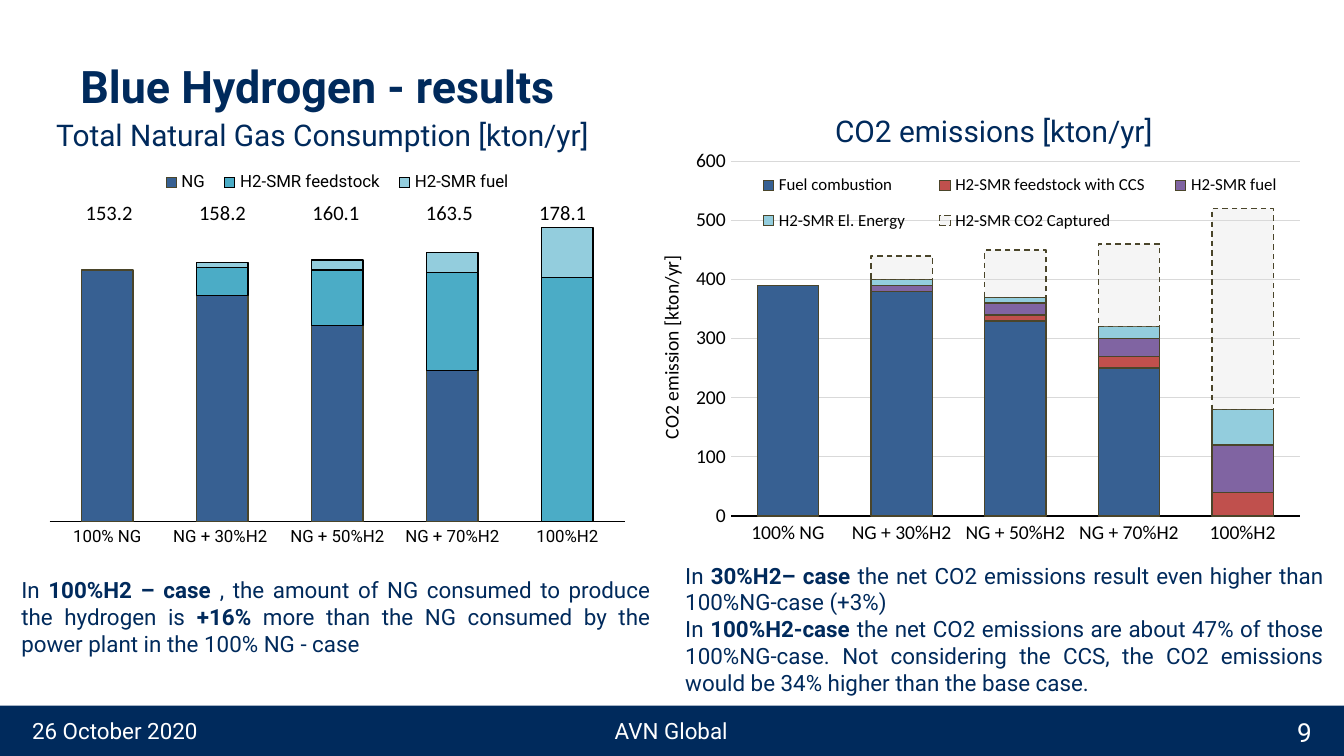
from dataclasses import dataclass

from lxml import etree
from pptx import Presentation
from pptx.chart.data import CategoryChartData
from pptx.dml.color import RGBColor
from pptx.enum.chart import XL_CHART_TYPE as ChartType, XL_LEGEND_POSITION as LegendPosition
from pptx.enum.chart import XL_TICK_MARK as TickMark
from pptx.enum.dml import MSO_LINE_DASH_STYLE as Dash
from pptx.enum.shapes import MSO_SHAPE as Shape
from pptx.enum.text import MSO_ANCHOR as Anchor, PP_ALIGN as Align
from pptx.oxml.ns import qn
from pptx.util import Inches, Pt

PLAIN_TABLE_STYLE = "{2D5ABB26-0587-4C30-8999-92F81FD0307C}"


@dataclass(frozen=True)
class Theme:
    heading_font: str = "Roboto"
    chart_font: str = "Calibri"
    navy: str = "002A5C"
    white: str = "FFFFFF"
    black: str = "000000"
    outline: str = "4A452A"
    grid: str = "D9D9D9"
    blue: str = "376092"
    teal: str = "4BACC6"
    pale_blue: str = "93CDDD"
    red: str = "C0504D"
    purple: str = "8064A2"
    title_size: float = 24
    subtitle_size: float = 16
    page_size: float = 14
    body_size: float = 12
    total_size: float = 11
    axis_size: float = 10.5
    small_size: float = 9
    line_width: float = 0.75


def rgb(color):
    return RGBColor.from_string(color)


def set_font(font, size, color, name, bold=None):
    font.size, font.name, font.bold = Pt(size), name, bold
    font.color.rgb = rgb(color)


def manual_layout(box, chart_size, inner=False):
    """Return a chart layout element for a box in inches inside the chart."""
    layout = etree.Element(qn("c:layout"))
    manual = etree.SubElement(layout, qn("c:manualLayout"))
    settings = [("layoutTarget", "inner")] if inner else []
    settings += [("xMode", "edge"), ("yMode", "edge")]
    settings += [(tag, str(length / total)) for tag, length, total in zip("xywh", box, chart_size * 2)]
    for tag, value in settings:
        etree.SubElement(manual, qn(f"c:{tag}")).set("val", value)
    return layout


class SlideBuilder:
    def __init__(self, slide, theme):
        self.slide, self.theme = slide, theme

    def bar(self, *box):
        shape = self.slide.shapes.add_shape(Shape.RECTANGLE, *map(Inches, box))
        shape.shadow.inherit = False
        shape.fill.solid()
        shape.fill.fore_color.rgb = rgb(self.theme.navy)
        shape.line.fill.background()

    def text(self, box, paragraphs, size, color=None, align=Align.LEFT, anchor=Anchor.TOP, bold=None):
        """Each paragraph is a list of runs; every second run is bold."""
        frame = self.slide.shapes.add_textbox(*map(Inches, box)).text_frame
        frame.word_wrap, frame.vertical_anchor = True, anchor
        for index, runs in enumerate(paragraphs):
            paragraph = frame.add_paragraph() if index else frame.paragraphs[0]
            paragraph.alignment = align
            set_font(paragraph.font, size, color or self.theme.navy, self.theme.heading_font, bold)
            for position, words in enumerate(runs):
                run = paragraph.add_run()
                run.text = words
                if position % 2:
                    run.font.bold = True

    def totals(self, box, values):
        table = self.slide.shapes.add_table(1, len(values), *map(Inches, box)).table
        table.first_row = table.horz_banding = False
        table._tbl.find(".//" + qn("a:tableStyleId")).text = PLAIN_TABLE_STYLE
        for cell, value in zip(table.rows[0].cells, values):
            cell.fill.background()
            cell.margin_left = cell.margin_right = cell.margin_top = cell.margin_bottom = 0
            cell.vertical_anchor = Anchor.MIDDLE
            paragraph = cell.text_frame.paragraphs[0]
            paragraph.text, paragraph.alignment = value, Align.CENTER
            set_font(paragraph.font, self.theme.total_size, self.theme.black, self.theme.chart_font)

    def stacked_chart(self, box, categories, series_rows, font, axis_size, gap, maximum, plot_box, legend_box):
        """Each series row is (name, values, fill colour, line colour)."""
        theme = self.theme
        data = CategoryChartData()
        data.categories = categories
        for name, values, *_ in series_rows:
            data.add_series(name, values)
        chart = self.slide.shapes.add_chart(ChartType.COLUMN_STACKED, *map(Inches, box), data).chart
        set_font(chart.font, axis_size, theme.black, font)
        chart.has_title = False

        plot = chart.plots[0]
        plot.gap_width, plot.overlap, plot.vary_by_categories = gap, 100, False
        for series, (_, _, fill, line) in zip(plot.series, series_rows):
            series.format.fill.solid()
            series.format.fill.fore_color.rgb = rgb(fill)
            series.format.line.color.rgb = rgb(line)
            series.format.line.width = Pt(theme.line_width)

        category_axis, value_axis = chart.category_axis, chart.value_axis
        category_axis.format.line.color.rgb = rgb(theme.black)
        category_axis.format.line.width = Pt(theme.line_width)
        for axis in (category_axis, value_axis):
            axis.major_tick_mark = axis.minor_tick_mark = TickMark.NONE
            set_font(axis.tick_labels.font, axis_size, theme.black, font)
        value_axis.minimum_scale, value_axis.maximum_scale = 0, maximum
        value_axis.has_major_gridlines = False

        chart.has_legend = True
        chart.legend.position = LegendPosition.TOP
        chart.legend.include_in_layout = False
        set_font(chart.legend.font, theme.small_size, theme.black, font)

        # Fixed places for the plot and the legend
        plot_area = chart._chartSpace.find(".//" + qn("c:plotArea"))
        legend = chart.legend._element
        for parent in (plot_area, legend):
            for layout in parent.findall(qn("c:layout")):
                parent.remove(layout)
        plot_area.insert(0, manual_layout(plot_box, box[2:], inner=True))
        legend.find(qn("c:legendPos")).addnext(manual_layout(legend_box, box[2:]))
        return chart

    def value_scale(self, chart, step, title):
        theme, axis = self.theme, chart.value_axis
        axis.major_unit = step
        axis.tick_labels.number_format = "0"
        axis.tick_labels.number_format_is_linked = False
        axis.format.line.fill.background()
        axis.has_major_gridlines = True
        axis.major_gridlines.format.line.color.rgb = rgb(theme.grid)
        axis.major_gridlines.format.line.width = Pt(theme.line_width)
        paragraph = axis.axis_title.text_frame.paragraphs[0]
        paragraph.text = title
        set_font(paragraph.font, theme.axis_size, theme.black, theme.chart_font, False)

    def ghost_series(self, series, opacity):
        series.format.line.dash_style = Dash.DASH
        color = series._element.find("/".join(map(qn, ("c:spPr", "a:solidFill", "a:srgbClr"))))
        etree.SubElement(color, qn("a:alpha")).set("val", str(opacity * 1000))


def main():
    presentation = Presentation()
    presentation.slide_width = Inches(10)
    presentation.slide_height = presentation.slide_width * 9 // 16
    theme = Theme()
    builder = SlideBuilder(presentation.slides.add_slide(presentation.slide_layouts[6]), theme)

    # Footer
    builder.bar(0, 5.25, 10, 0.38)
    for left, top, width, words, size, align in [
        (3.83, 5.25, 2.33, "AVN Global", theme.body_size, Align.CENTER),
        (0.14, 5.25, 3.6, "26 October 2020", theme.body_size, Align.LEFT),
        (7.33, 5.26, 2.53, "9", theme.page_size, Align.RIGHT),
    ]:
        builder.text((left, top, width, 0.37), [[words]], size, theme.white, align, Anchor.MIDDLE)

    # Headings
    builder.text((0.5, 0.39, 9, 0.77), [["Blue Hydrogen - results"]], theme.title_size, bold=True)
    builder.text((0.32, 0.82, 4.68, 0.37), [["Total Natural Gas Consumption [kton/yr]"]], theme.subtitle_size)

    # Natural gas consumption
    consumption = builder.stacked_chart(
        (0.27, 1.19, 4.48, 3.09), ["100% NG", "NG + 30%H2 ", "NG + 50%H2", "NG + 70%H2", "100%H2"], [
            ("NG", (100, 90, 78, 60, 0), theme.blue, theme.outline),
            ("H2-SMR feedstock", (None, 11, 22, 39, 97), theme.teal, theme.black),
            ("H2-SMR fuel", (None, 2, 4, 8, 20), theme.pale_blue, theme.black),
        ], theme.heading_font, theme.small_size, 125, 131, (0.1, 0.24, 4.28, 2.45), (0.86, 0.03, 2.76, 0.27))
    consumption.value_axis.visible = False
    builder.totals((0.39, 1.49, 4.22, 0.2), ["153.2", "158.2", "160.1", "163.5", "178.1"])
    builder.text((0.06, 4.24, 4.88, 0.71), [[
        "In ", "100%H2 – case ", ", the amount of NG consumed to produce the hydrogen is ", "+16%",
        " more than the NG consumed by the power plant in the 100% NG - case ",
    ]], theme.body_size, align=Align.JUSTIFY)

    # CO2 emissions
    emissions = builder.stacked_chart(
        (4.87, 1.09, 4.95, 3.2), ["100% NG", "NG + 30%H2", "NG + 50%H2", "NG + 70%H2", "100%H2"], [
            ("Fuel combustion", (390, 380, 330, 250, 0), theme.blue, theme.outline),
            ("H2-SMR feedstock with CCS", (0, 0, 10, 20, 40), theme.red, theme.outline),
            ("H2-SMR fuel", (0, 10, 20, 30, 80), theme.purple, theme.outline),
            ("H2-SMR El. Energy ", (0, 10, 10, 20, 60), theme.pale_blue, theme.outline),
            ("H2-SMR CO2 Captured", (0, 40, 80, 140, 340), theme.grid, theme.outline),
        ], theme.chart_font, theme.axis_size, 85, 600, (0.57, 0.11, 4.23, 2.64), (0.62, 0.1, 4.2, 0.64))
    builder.value_scale(emissions, 100, "CO2 emission [kton/yr]")
    builder.ghost_series(emissions.plots[0].series[4], 25)
    builder.text((4.95, 0.79, 4.89, 0.37), [["CO2 emissions [kton/yr]"]], theme.subtitle_size, align=Align.CENTER)
    builder.text((5, 4.13, 4.95, 1.31), [
        ["In ", "30%H2– case ", "the net CO2 emissions result even higher than 100%NG-case (+3%)"],
        ["In ", "100%H2-case ", "the net CO2 emissions are about 47% of those 100%NG-case. "
         "Not considering the CCS, the CO2 emissions would be 34% higher than the base case."],
    ], theme.body_size, align=Align.JUSTIFY)

    presentation.save("out.pptx")


if __name__ == "__main__":
    main()
